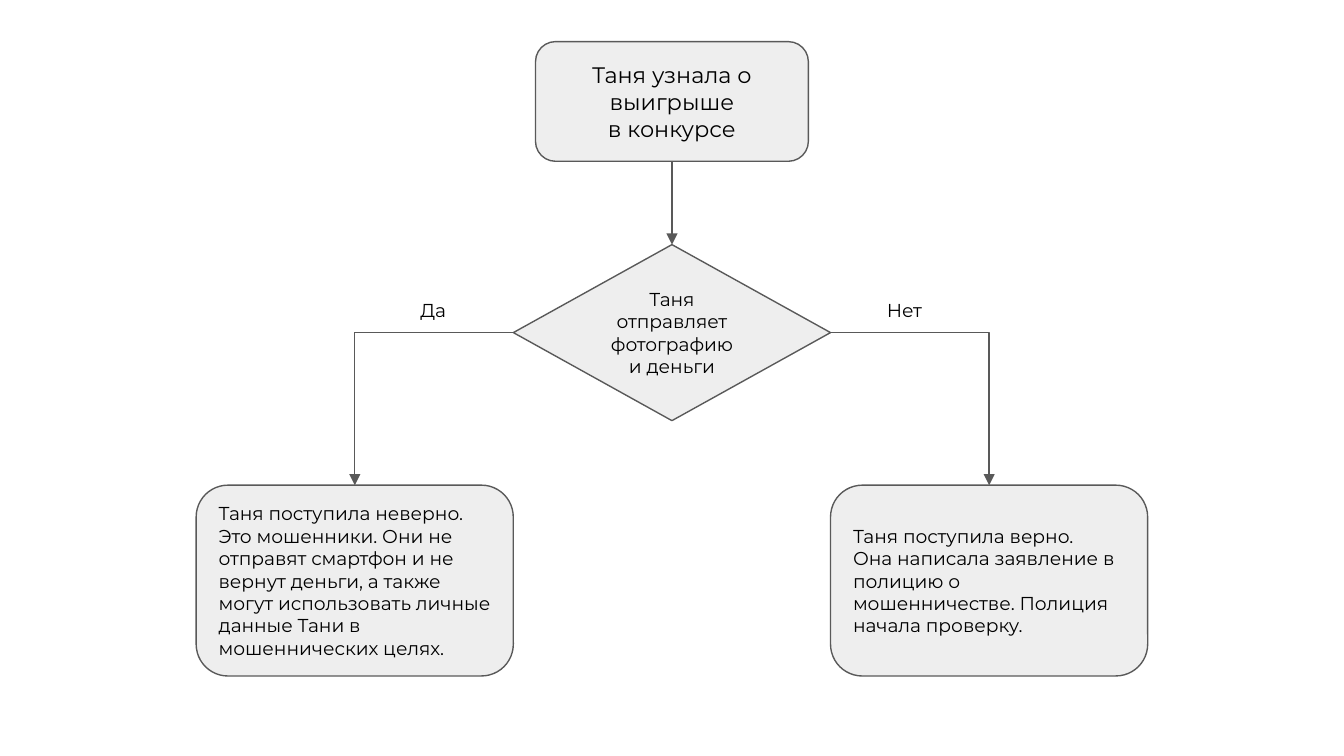
from lxml.etree import SubElement
from pptx import Presentation
from pptx.dml.color import RGBColor
from pptx.enum.shapes import MSO_CONNECTOR, MSO_SHAPE
from pptx.enum.text import MSO_ANCHOR, PP_ALIGN
from pptx.oxml.ns import qn
from pptx.util import Pt

PX = 9144  # 100 px to the inch
FONT = "Montserrat"
FILL, LINE, TEXT = "EEEEEE", "595959", "000000"
INSET = 10
TOP, LEFT, BOTTOM, RIGHT = range(4)  # connection sites

CENTER_X = 500
NODE_W, OUTCOME_H, OUTCOME_Y = 236, 142, 361
BRANCH_X = 236  # distance of each outcome from the centre line


def px(length):
    return int(length * PX)


def color(hex_string):
    return RGBColor.from_string(hex_string)


def write(shape, text, size, align, anchor):
    frame = shape.text_frame
    frame.word_wrap = True
    frame.vertical_anchor = anchor
    frame.margin_left = frame.margin_right = px(INSET)
    frame.margin_top = frame.margin_bottom = px(INSET)
    frame.text = text
    for paragraph in frame.paragraphs:
        paragraph.alignment = align
        for run in paragraph.runs:
            run.font.name = FONT
            run.font.size = Pt(size)
            run.font.color.rgb = color(TEXT)


def add_node(slide, kind, center_x, y, w, h, text, size=10, align=PP_ALIGN.CENTER):
    node = slide.shapes.add_shape(kind, px(center_x - w / 2), px(y), px(w), px(h))
    node.shadow.inherit = False
    node.fill.solid()
    node.fill.fore_color.rgb = color(FILL)
    node.line.color.rgb = color(LINE)
    node.line.width = Pt(0.75)
    write(node, text, size, align, MSO_ANCHOR.MIDDLE)
    return node


def add_label(slide, x, y, w, h, text):
    label = slide.shapes.add_textbox(px(x), px(y), px(w), px(h))
    write(label, text, 10, PP_ALIGN.LEFT, MSO_ANCHOR.TOP)


def add_arrow(slide, source, source_site, target, kind=MSO_CONNECTOR.STRAIGHT):
    arrow = slide.shapes.add_connector(kind, 0, 0, 0, 0)
    arrow.begin_connect(source, source_site)
    arrow.end_connect(target, TOP)
    arrow.line.color.rgb = color(LINE)
    arrow.line.width = Pt(0.75)
    properties = arrow._element.spPr
    if kind == MSO_CONNECTOR.ELBOW:  # a single right-angle bend
        properties.find(qn("a:prstGeom")).set("prst", "bentConnector2")
    SubElement(properties.find(qn("a:ln")), qn("a:tailEnd"), type="triangle")
    SubElement(properties, qn("a:effectLst"))


def main():
    prs = Presentation()
    prs.slide_width, prs.slide_height = px(1000), px(562.5)
    slide = prs.slides.add_slide(prs.slide_layouts[6])

    # Start and decision
    start = add_node(slide, MSO_SHAPE.ROUNDED_RECTANGLE, CENTER_X, 31, 203, 89,
                     "Таня узнала о выигрыше\nв конкурсе", size=12)
    decision = add_node(slide, MSO_SHAPE.DIAMOND, CENTER_X, 182, NODE_W, 131,
                        "Таня отправляет фотографию и деньги")
    add_arrow(slide, start, BOTTOM, decision)

    # Outcomes of both answers
    outcomes = [
        (-1, LEFT, "Таня поступила неверно. Это мошенники. Они не отправят "
                   "смартфон и не вернут деньги, а также могут использовать "
                   "личные данные Тани в мошеннических целях."),
        (1, RIGHT, "Таня поступила верно.\nОна написала заявление в полицию "
                   "о мошенничестве. Полиция начала проверку."),
    ]
    for side, site, text in outcomes:
        outcome = add_node(slide, MSO_SHAPE.ROUNDED_RECTANGLE,
                           CENTER_X + side * BRANCH_X, OUTCOME_Y, NODE_W, OUTCOME_H,
                           text, align=PP_ALIGN.LEFT)
        add_arrow(slide, decision, site, outcome, MSO_CONNECTOR.ELBOW)

    # Answers above the branches
    add_label(slide, 303, 214, 47, 34, "Да")
    add_label(slide, 650, 214, 54, 34, "Нет")

    prs.save("out.pptx")


if __name__ == "__main__":
    main()
